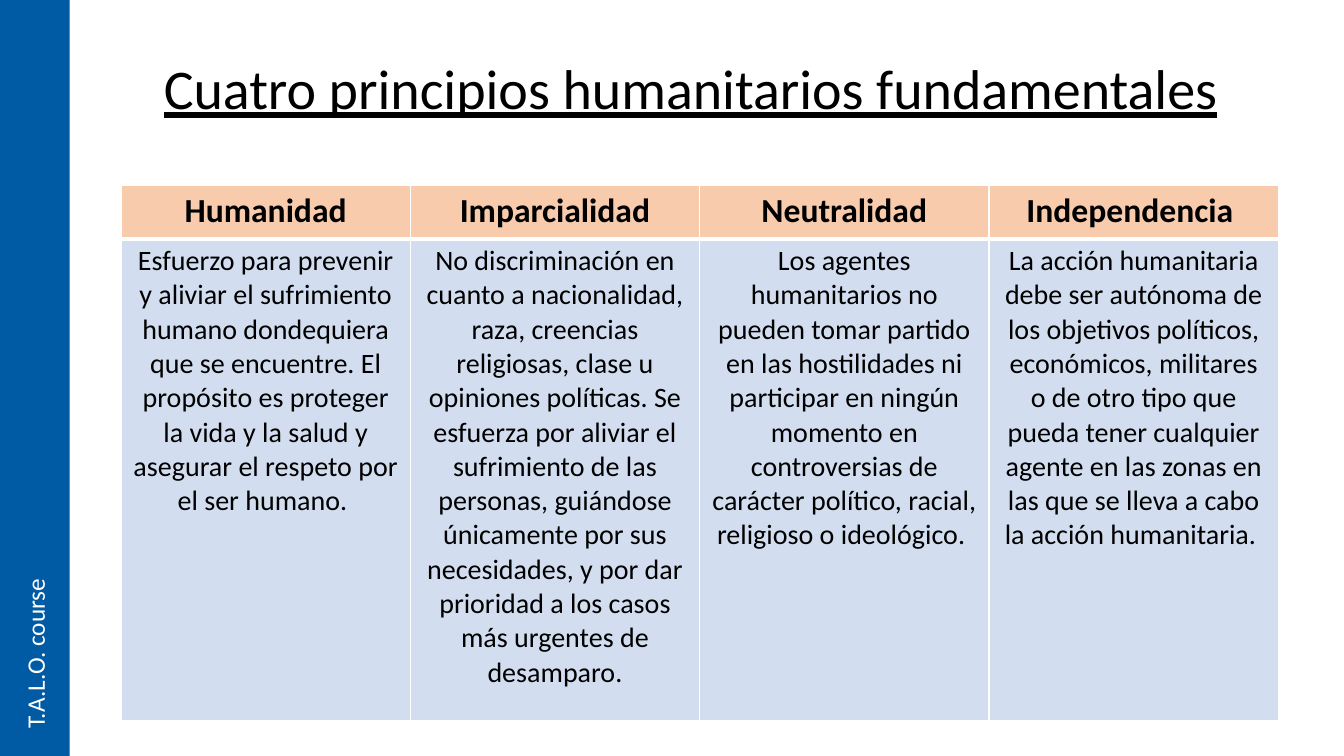
from dataclasses import dataclass

from lxml import etree
from pptx import Presentation
from pptx.dml.color import RGBColor
from pptx.enum.shapes import MSO_SHAPE
from pptx.enum.text import MSO_ANCHOR, PP_ALIGN
from pptx.oxml.ns import qn
from pptx.util import Pt

EMU_PER_PX = 9144  # 100 px to the inch
CENTER, LEFT = PP_ALIGN.CENTER, PP_ALIGN.LEFT
MIDDLE = MSO_ANCHOR.MIDDLE
RECTANGLE = MSO_SHAPE.RECTANGLE
TITLE_ONLY = 5


@dataclass(frozen=True)
class Theme:
    font: str = "Calibri"
    ink: str = "000000"
    white: str = "FFFFFF"
    band: str = "005BA4"
    header: str = "F8CBAD"
    body: str = "D2DEEF"
    title_size: int = 40
    header_size: int = 24
    body_size: int = 20
    band_size: int = 18
    thin_rule: int = 1
    thick_rule: int = 3


THEME = Theme()

PRINCIPLES = [
    ("Humanidad",
     "Esfuerzo para prevenir y aliviar el sufrimiento humano dondequiera que se "
     "encuentre. El propósito es proteger la vida y la salud y asegurar el respeto "
     "por el ser humano. "),
    ("Imparcialidad",
     "No discriminación en cuanto a nacionalidad, raza, creencias religiosas, clase "
     "u opiniones políticas. Se esfuerza por aliviar el sufrimiento de las personas, "
     "guiándose únicamente por sus necesidades, y por dar prioridad a los casos más "
     "urgentes de desamparo."),
    ("Neutralidad",
     "Los agentes humanitarios no pueden tomar partido en las hostilidades ni "
     "participar en ningún momento en controversias de carácter político, racial, "
     "religioso o ideológico. "),
    ("Independencia ",
     "La acción humanitaria debe ser autónoma de los objetivos políticos, económicos, "
     "militares o de otro tipo que pueda tener cualquier agente en las zonas en las "
     "que se lleva a cabo la acción humanitaria. "),
]


def px(length):
    return length * EMU_PER_PX


def write(frame, text, size, color, align, bold=False, underline=False):
    frame.text = text
    paragraph = frame.paragraphs[0]
    paragraph.alignment = align
    font = paragraph.runs[0].font
    font.name = THEME.font
    font.size = Pt(size)
    font.color.rgb = RGBColor.from_string(color)
    font.bold = bold
    font.underline = underline
    return paragraph


def set_borders(cell, top, bottom):
    """Draw white rules; the sides are always thin."""
    properties = cell._tc.get_or_add_tcPr()
    widths = {"lnL": THEME.thin_rule, "lnR": THEME.thin_rule,
              "lnT": top, "lnB": bottom}
    for position, (side, width) in enumerate(widths.items()):
        line = etree.Element(qn(f"a:{side}"), w=str(Pt(width)))
        fill = etree.SubElement(line, qn("a:solidFill"))
        etree.SubElement(fill, qn("a:srgbClr"), val=THEME.white)
        properties.insert(position, line)


def fill_cell(cell, text, size, fill, top, bottom, bold=False):
    cell.fill.solid()
    cell.fill.fore_color.rgb = RGBColor.from_string(fill)
    set_borders(cell, top, bottom)
    write(cell.text_frame, text, size, THEME.ink, CENTER, bold=bold)


def add_title(slide, text):
    title = slide.shapes.title
    title.left, title.top, title.width, title.height = map(px, (110, 18, 1150, 145))
    title.text_frame.vertical_anchor = MIDDLE
    heading = write(title.text_frame, text, THEME.title_size, THEME.ink, CENTER,
                    underline=True)
    heading.line_spacing = 0.9


def add_principles(slide, principles):
    column_width, header_height, body_height = 287, 53, 478
    table = slide.shapes.add_table(
        2, len(principles), px(120), px(184),
        px(column_width * len(principles)), px(header_height + body_height)).table
    table.rows[0].height = px(header_height)
    table.rows[1].height = px(body_height)
    for column, (name, meaning) in enumerate(principles):
        table.columns[column].width = px(column_width)
        fill_cell(table.cell(0, column), name, THEME.header_size, THEME.header,
                  THEME.thin_rule, THEME.thick_rule, bold=True)
        fill_cell(table.cell(1, column), meaning, THEME.body_size, THEME.body,
                  THEME.thick_rule, THEME.thin_rule)


def add_side_band(slide, text):
    """Add the full-height band whose label reads upwards."""
    band = slide.shapes.add_shape(RECTANGLE, 0, 0, px(69), px(750))
    band.shadow.inherit = False
    band.fill.solid()
    band.fill.fore_color.rgb = RGBColor.from_string(THEME.band)
    band.line.fill.background()
    frame = band.text_frame
    frame.vertical_anchor = MIDDLE
    frame._txBody.bodyPr.set("vert", "vert270")
    label = write(frame, text, THEME.band_size, THEME.white, LEFT)
    label._p.get_or_add_pPr().set("marL", str(px(17)))


def main():
    presentation = Presentation()
    presentation.slide_width, presentation.slide_height = px(1333), px(750)
    slide = presentation.slides.add_slide(presentation.slide_layouts[TITLE_ONLY])
    add_title(slide, "Cuatro principios humanitarios fundamentales")
    add_principles(slide, PRINCIPLES)
    add_side_band(slide, "T.A.L.O. course")
    presentation.save("out.pptx")


if __name__ == "__main__":
    main()
